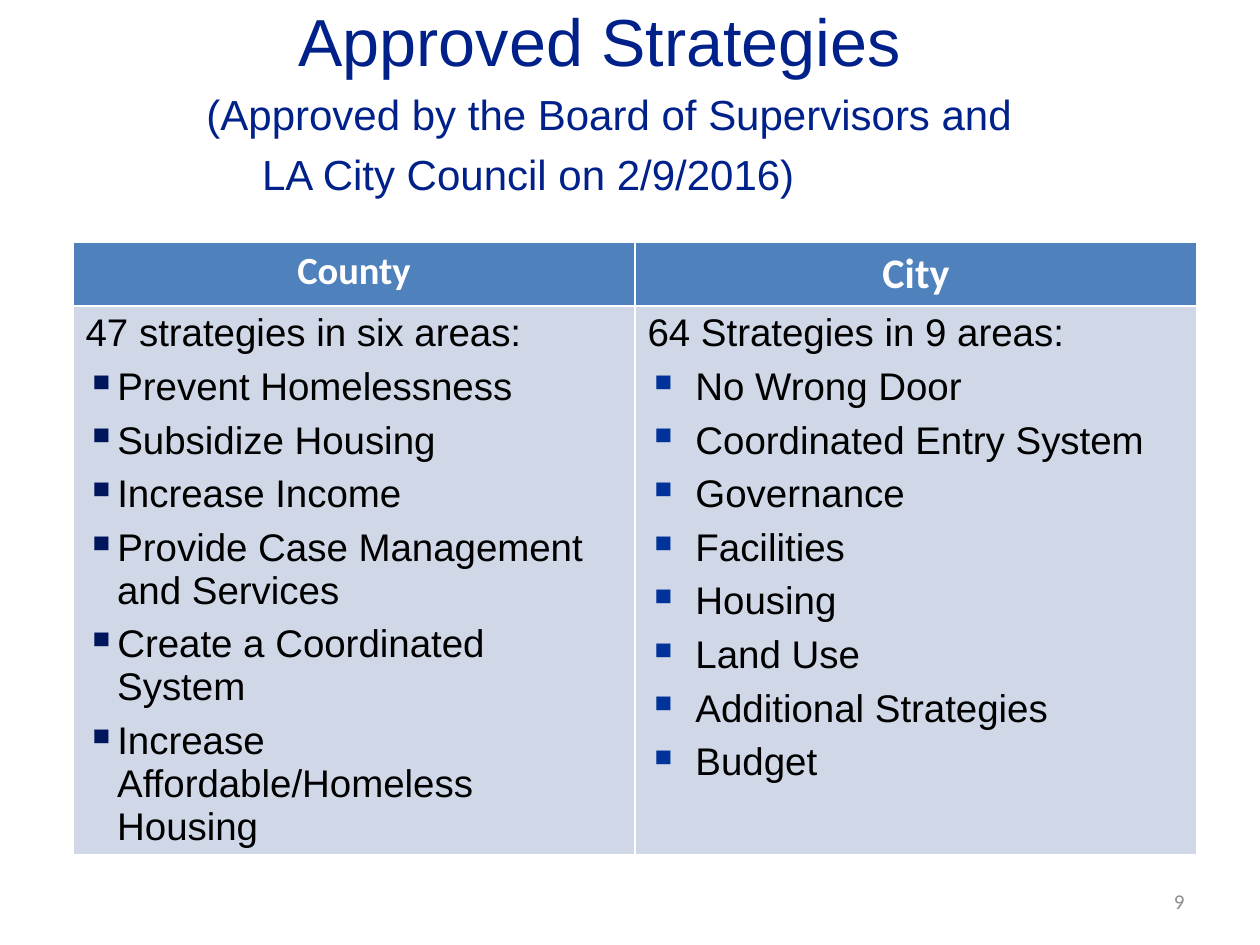
from pptx import Presentation
from pptx.dml.color import RGBColor
from pptx.enum.text import MSO_ANCHOR, MSO_AUTO_SIZE, PP_ALIGN
from pptx.oxml.ns import qn
from pptx.util import Inches, Pt
from lxml import etree

LEFT, CENTER, RIGHT = PP_ALIGN.LEFT, PP_ALIGN.CENTER, PP_ALIGN.RIGHT
MIDDLE = MSO_ANCHOR.MIDDLE
NO_AUTOFIT = MSO_AUTO_SIZE.NONE
TITLE_ONLY = 5
NAVY, WHITE, BLACK, GRAY = "00218A", "FFFFFF", "000000", "8C8C8C"
HEADER_FILL, BODY_FILL = "4F81BD", "D0D8E8"
TABLE_LEFT, TABLE_TOP, COLUMN_WIDTH = 0.58, 1.92, 4.46
ROW_HEIGHTS = (0.5, 4.35)

COLUMNS = [
    {
        "header": "County", "header_size": 22,
        "intro": "47 strategies in six areas:",
        "items": ["Prevent Homelessness", "Subsidize Housing", "Increase Income",
                  "Provide Case Management and Services",
                  "Create a Coordinated System",
                  "Increase Affordable/Homeless Housing"],
        "bullet_color": "00165C", "indent": 0.25, "before": 0, "after": 6,
    },
    {
        "header": "City", "header_size": 24,
        "intro": "64 Strategies in 9 areas:",
        "items": ["No Wrong Door", "Coordinated Entry System", "Governance",
                  "Facilities", "Housing", "Land Use", "Additional Strategies",
                  "Budget"],
        "bullet_color": "003399", "indent": 0.38, "before": 6, "after": 0,
    },
]


def rgb(value):
    """Turn a hex string into a colour."""
    return RGBColor.from_string(value)


def add_bullet(paragraph, color, indent):
    """Give a paragraph a coloured square bullet with a hanging indent."""
    properties = paragraph._p.get_or_add_pPr()
    properties.set("marL", str(Inches(indent)))
    properties.set("indent", str(-Inches(indent)))
    bullet_color = etree.SubElement(properties, qn("a:buClr"))
    etree.SubElement(bullet_color, qn("a:srgbClr"), val=color)
    etree.SubElement(properties, qn("a:buSzPct"), val="110000")
    etree.SubElement(properties, qn("a:buChar"), char="▪")


def write(frame, text, first=False, size=22, font="Arial", color=BLACK, bold=False,
          align=LEFT, line=None, before=0, after=0, margin=0, bullet=None, indent=0):
    """Write one formatted paragraph into a text frame."""
    paragraph = frame.paragraphs[0] if first else frame.add_paragraph()
    paragraph.alignment = align
    paragraph.space_before, paragraph.space_after = Pt(before), Pt(after)
    if line:
        paragraph.line_spacing = Pt(line)
    if margin:
        paragraph._p.get_or_add_pPr().set("marL", str(Inches(margin)))
    if bullet:
        add_bullet(paragraph, bullet, indent)
    run = paragraph.add_run()
    run.text = text
    run.font.name, run.font.size, run.font.bold = font, Pt(size), bold
    run.font.color.rgb = rgb(color)


def prepare_frame(shape):
    """Wrap a shape's text and centre it vertically."""
    frame = shape.text_frame
    frame.word_wrap = True
    frame.auto_size = NO_AUTOFIT
    frame.vertical_anchor = MIDDLE
    return frame


def fill_title(slide):
    """Place the title and its two-line subtitle."""
    title = slide.shapes.title
    title.left, title.top = Inches(1.42), Inches(0.5)
    title.width, title.height = Inches(6.83), Inches(0.74)
    frame = prepare_frame(title)
    write(frame, "Approved Strategies ", first=True, size=38, color=NAVY,
          align=CENTER, line=34)
    write(frame, "(Approved by the Board of Supervisors and", size=24, color=NAVY,
          align=CENTER, line=34)
    write(frame, "LA City Council on 2/9/2016)", size=24, color=NAVY,
          line=34, margin=0.56)


def fill_cell(cell, color):
    """Fill a table cell and return its text frame."""
    cell.fill.solid()
    cell.fill.fore_color.rgb = rgb(color)
    return cell.text_frame


def add_strategy_table(slide):
    """Add the table with one column for each government."""
    table = slide.shapes.add_table(
        2, len(COLUMNS), Inches(TABLE_LEFT), Inches(TABLE_TOP),
        Inches(COLUMN_WIDTH * len(COLUMNS)), Inches(sum(ROW_HEIGHTS))).table
    for row, height in zip(table.rows, ROW_HEIGHTS):
        row.height = Inches(height)
    for index, column in enumerate(COLUMNS):
        table.columns[index].width = Inches(COLUMN_WIDTH)
        header = fill_cell(table.cell(0, index), HEADER_FILL)
        write(header, column["header"], first=True, size=column["header_size"],
              font="Calibri", color=WHITE, bold=True, align=CENTER)
        body = fill_cell(table.cell(1, index), BODY_FILL)
        write(body, column["intro"], first=True, after=column["after"])
        for item in column["items"]:
            write(body, item, before=column["before"], after=column["after"],
                  bullet=column["bullet_color"], indent=column["indent"])


def add_page_number(slide, number):
    """Add the page number at the bottom right."""
    box = slide.shapes.add_textbox(Inches(7.17), Inches(6.95), Inches(2.33), Inches(0.4))
    write(prepare_frame(box), number, first=True, size=12, font="Calibri",
          color=GRAY, align=RIGHT)


def main():
    """Build and save the slide."""
    presentation = Presentation()
    presentation.slide_width, presentation.slide_height = Inches(10), Inches(7.5)
    slide = presentation.slides.add_slide(presentation.slide_layouts[TITLE_ONLY])
    fill_title(slide)
    add_strategy_table(slide)
    add_page_number(slide, "9")
    presentation.save("out.pptx")


if __name__ == "__main__":
    main()
